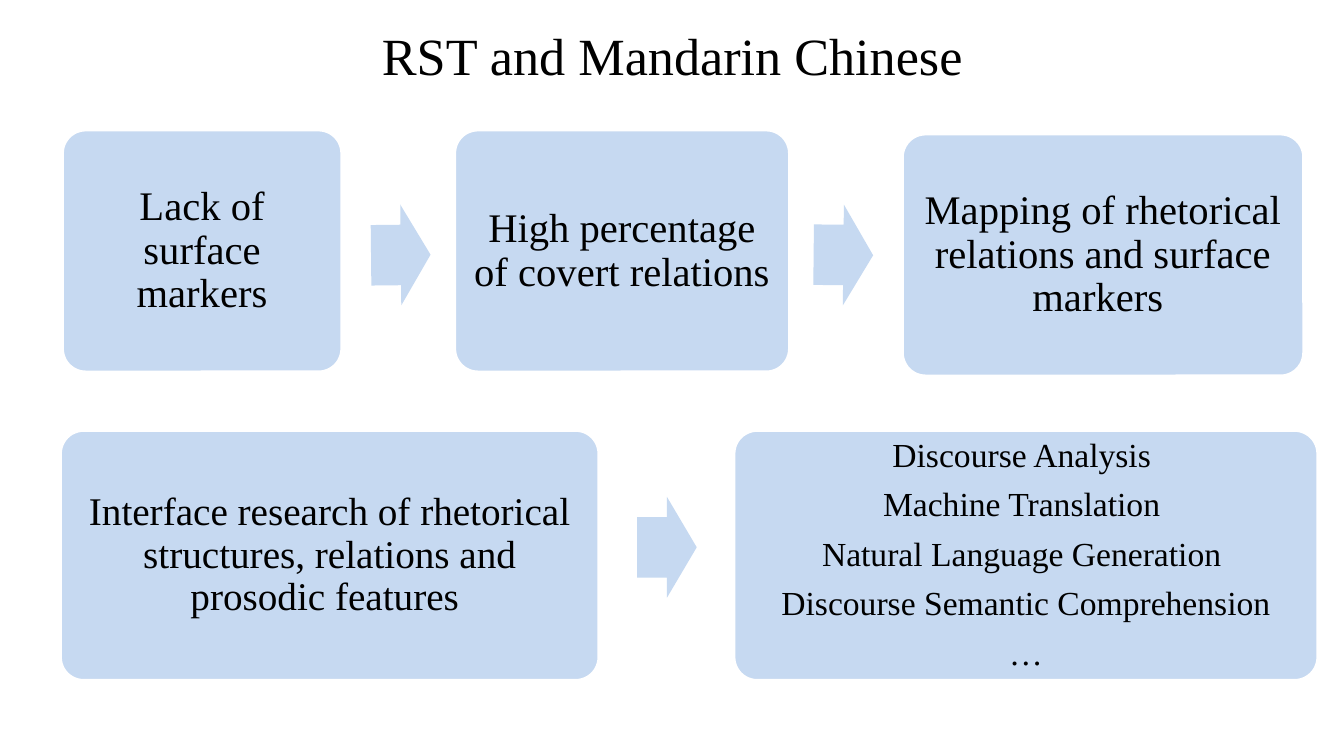
from pptx import Presentation
from pptx.dml.color import RGBColor
from pptx.enum.shapes import MSO_SHAPE
from pptx.enum.text import MSO_ANCHOR, PP_ALIGN
from pptx.util import Inches, Pt

ROUNDED, ARROW = MSO_SHAPE.ROUNDED_RECTANGLE, MSO_SHAPE.RIGHT_ARROW
MIDDLE, CENTER = MSO_ANCHOR.MIDDLE, PP_ALIGN.CENTER

COLORS = {"paper": "FFFFFF", "panel": "C6D9F1", "ink": "000000"}
FONT = "Times New Roman"
SLIDE_W, SLIDE_H = 13.33, 7.5
CORNER = 0.23
CORNER_INSET = CORNER * 0.29  # text inset a rounded rectangle adds by itself
ARROW_SIZE = (0.59, 1.0)

TITLE = "RST and Mandarin Chinese"
# (left, top, width, height), point size, margin, paragraphs
STEPS = [
    ((0.62, 1.29, 2.77, 2.4), 29, 0.17, ["Lack of surface markers"]),
    ((4.51, 1.29, 3.32, 2.4), 29, 0.17, ["High percentage of covert relations "]),
    ((8.95, 1.33, 3.98, 2.4), 29, 0.17,
     ["Mapping of rhetorical relations and surface markers "]),
    ((0.6, 4.27, 5.34, 2.48), 28, 0.13,
     ["Interface research of rhetorical structures, relations and prosodic features "]),
    ((7.28, 4.27, 5.79, 2.48), 24, 0.13,
     ["Discourse Analysis ", "Machine Translation ", "Natural Language Generation ",
      "Discourse Semantic Comprehension", "…"]),
]
# left, top, rotation
ARROWS = [(3.68, 2.03, -0.6), (8.07, 2.03, 0.6), (6.32, 4.93, 0)]


def color(name):
    return RGBColor.from_string(COLORS[name])


def write(frame, paragraphs, size, margin, spacing=1.0, gap=0):
    frame.word_wrap = True
    frame.vertical_anchor = MIDDLE
    frame.margin_left = frame.margin_right = Inches(margin)
    frame.margin_top = frame.margin_bottom = Inches(margin)
    for i, words in enumerate(paragraphs):
        paragraph = frame.add_paragraph() if i else frame.paragraphs[0]
        paragraph.alignment = CENTER
        paragraph.line_spacing = spacing
        paragraph.space_after = Pt(gap)
        run = paragraph.add_run()
        run.text = words
        run.font.name = FONT
        run.font.size = Pt(size)
        run.font.color.rgb = color("ink")


def add_panel(slide, kind, box):
    panel = slide.shapes.add_shape(kind, *map(Inches, box))
    panel.shadow.inherit = False
    panel.fill.solid()
    panel.fill.fore_color.rgb = color("panel")
    panel.line.fill.background()
    return panel


def main():
    deck = Presentation()
    deck.slide_width, deck.slide_height = Inches(SLIDE_W), Inches(SLIDE_H)
    slide = deck.slides.add_slide(deck.slide_layouts[6])
    slide.background.fill.solid()
    slide.background.fill.fore_color.rgb = color("paper")

    heading = slide.shapes.add_textbox(*map(Inches, (0.67, -0.11, 12, 1.3)))
    write(heading.text_frame, [TITLE], 37.3, 0.1)

    for box, size, margin, paragraphs in STEPS:
        step = add_panel(slide, ROUNDED, box)
        step.adjustments[0] = CORNER / min(box[2:])
        step.line.color.rgb = color("paper")
        step.line.width = Pt(2)
        write(step.text_frame, paragraphs, size, margin - CORNER_INSET,
              spacing=0.9, gap=round(size * 0.39, 1))

    for left, top, rotation in ARROWS:
        arrow = add_panel(slide, ARROW, (left, top, *ARROW_SIZE))
        arrow.adjustments[0], arrow.adjustments[1] = 0.6, 0.5
        arrow.rotation = rotation

    deck.save("out.pptx")


if __name__ == "__main__":
    main()
